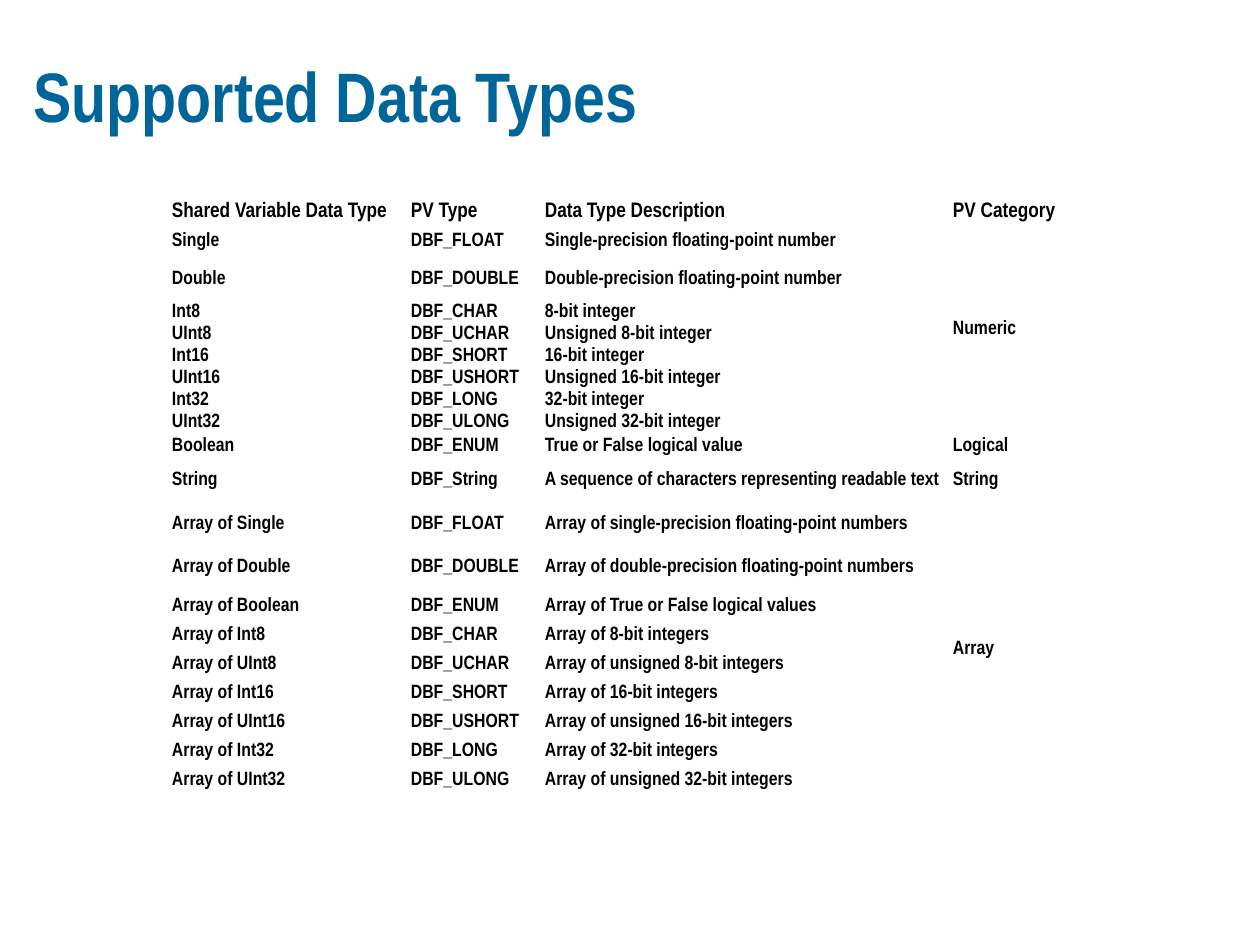
import dataclasses

import pptx
import pptx.dml.color
import pptx.enum.text
import pptx.util

PX = pptx.util.Inches(1) / 126
FONT = "Arial Narrow"
BLUE = pptx.dml.color.RGBColor(0x00, 0x66, 0x99)
BLACK = pptx.dml.color.RGBColor(0x00, 0x00, 0x00)
MIDDLE = pptx.enum.text.MSO_ANCHOR.MIDDLE
COLUMN_WIDTHS = (239, 134, 408, 175)
HEADERS = ("Shared Variable Data Type", "PV Type", "Data Type Description", "PV Category")


@dataclasses.dataclass(frozen=True)
class DataType:
    name: str
    pv_type: str
    description: str
    height: int


@dataclasses.dataclass(frozen=True)
class Category:
    name: str
    types: tuple[DataType, ...]


CATEGORIES = (
    Category("Numeric", (
        DataType("Single", "DBF_FLOAT", "Single-precision floating-point number", 34),
        DataType("Double", "DBF_DOUBLE", "Double-precision floating-point number", 44),
        DataType("Int8", "DBF_CHAR", "8-bit integer", 14),
        DataType("UInt8", "DBF_UCHAR", "Unsigned 8-bit integer", 24),
        DataType("Int16", "DBF_SHORT", "16-bit integer", 14),
        DataType("UInt16", "DBF_USHORT", "Unsigned 16-bit integer", 24),
        DataType("Int32", "DBF_LONG", "32-bit integer", 14),
        DataType("UInt32", "DBF_ULONG", "Unsigned 32-bit integer", 24),
    )),
    Category("Logical", (
        DataType("Boolean", "DBF_ENUM", "True or False logical value", 24),
    )),
    Category("String", (
        DataType("String", "DBF_String", "A sequence of characters representing readable text", 44),
    )),
    Category("Array", (
        DataType("Array of Single", "DBF_FLOAT", "Array of single-precision floating-point numbers", 44),
        DataType("Array of Double", "DBF_DOUBLE", "Array of double-precision floating-point numbers", 44),
        DataType("Array of Boolean", "DBF_ENUM", "Array of True or False logical values", 34),
        DataType("Array of Int8", "DBF_CHAR", "Array of 8-bit integers", 24),
        DataType("Array of UInt8", "DBF_UCHAR", "Array of unsigned 8-bit integers", 34),
        DataType("Array of Int16", "DBF_SHORT", "Array of 16-bit integers", 24),
        DataType("Array of UInt16", "DBF_USHORT", "Array of unsigned 16-bit integers", 34),
        DataType("Array of Int32", "DBF_LONG", "Array of 32-bit integers", 24),
        DataType("Array of UInt32", "DBF_ULONG", "Array of unsigned 32-bit integers", 34),
    )),
)


def px(n: int) -> pptx.util.Emu:
    return pptx.util.Emu(round(n * PX))


def add_text(tf, text: str, size: int, color: pptx.dml.color.RGBColor) -> None:
    p = tf.paragraphs[0]
    p.alignment = pptx.enum.text.PP_ALIGN.LEFT
    r = p.add_run()
    r.text = text
    r.font.name = FONT
    r.font.size = pptx.util.Pt(size)
    r.font.bold = True
    r.font.color.rgb = color


def add_title(s, text: str) -> None:
    sp = s.shapes.title
    sp.left, sp.top, sp.width, sp.height = px(21), px(53), px(1218), px(84)
    tf = sp.text_frame
    tf.vertical_anchor = MIDDLE
    add_text(tf, text, 40, BLUE)


def format_cell(cell) -> None:
    cell.fill.background()
    cell.vertical_anchor = MIDDLE
    cell.margin_left = cell.margin_right = px(4)
    cell.margin_top = cell.margin_bottom = px(1)


def add_type_table(s, categories: tuple[Category, ...]) -> None:
    types = [t for category in categories for t in category.types]
    heights = [24] + [t.height for t in types]
    table = s.shapes.add_table(
        len(heights), len(COLUMN_WIDTHS),
        px(168), px(200), px(sum(COLUMN_WIDTHS)), px(sum(heights)),
    ).table
    table.first_row = table.horz_banding = False
    for column, width in zip(table.columns, COLUMN_WIDTHS):
        column.width = px(width)
    for row, height in zip(table.rows, heights):
        row.height = px(height)
    for cell in table.iter_cells():
        format_cell(cell)

    for col, text in enumerate(HEADERS):
        add_text(table.cell(0, col).text_frame, text, 12, BLACK)
    for row, t in enumerate(types, 1):
        for col, text in enumerate((t.name, t.pv_type, t.description)):
            add_text(table.cell(row, col).text_frame, text, 11, BLACK)

    row = 1
    for category in categories:
        cell = table.cell(row, 3)
        row += len(category.types)
        if len(category.types) > 1:
            cell.merge(table.cell(row - 1, 3))
        add_text(cell.text_frame, category.name, 11, BLACK)


def main() -> None:
    prs = pptx.Presentation()
    prs.slide_width, prs.slide_height = px(1260), px(945)
    s = prs.slides.add_slide(prs.slide_layouts[5])
    add_title(s, "Supported Data Types")
    add_type_table(s, CATEGORIES)
    prs.save("out.pptx")


if __name__ == "__main__":
    main()
